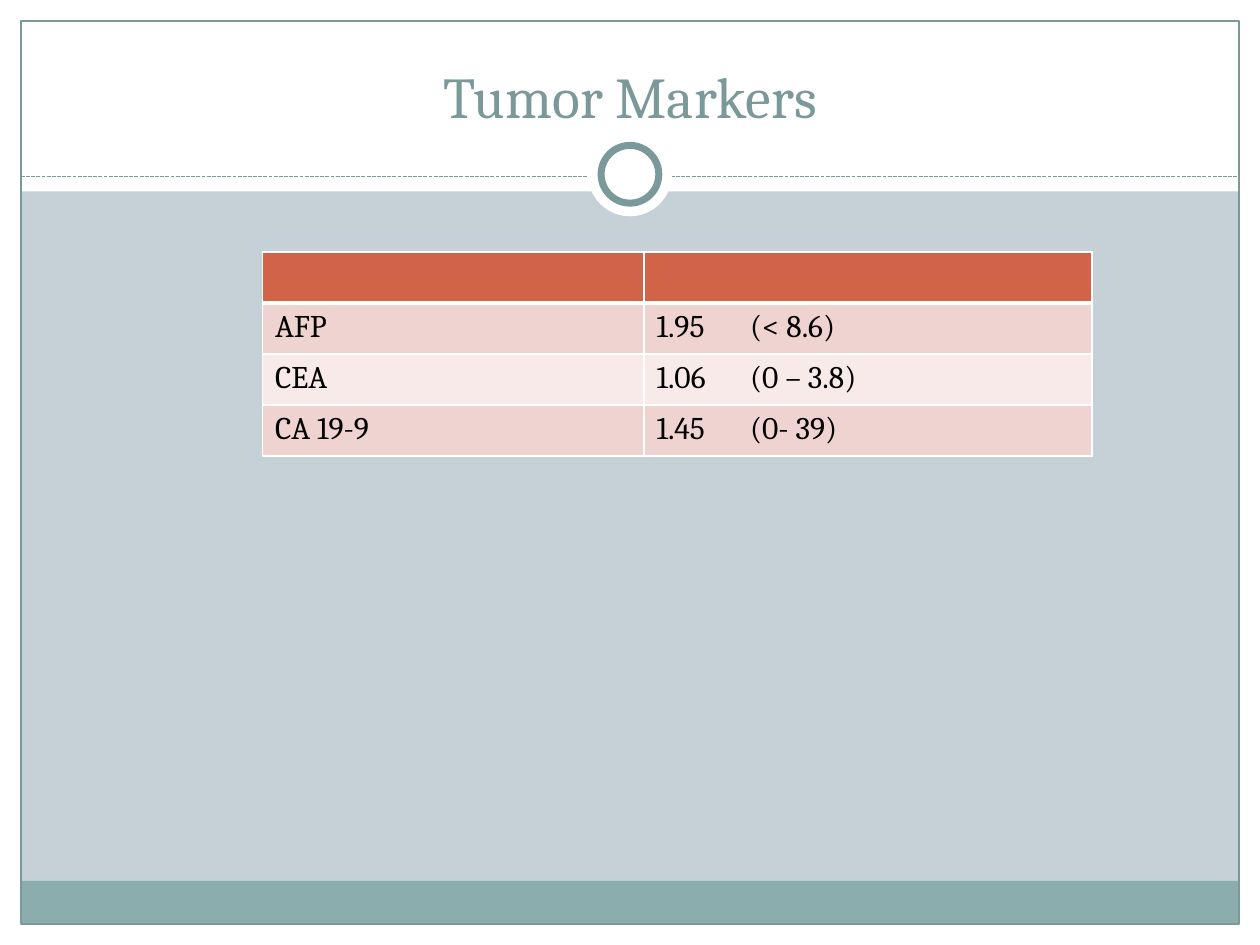
import pptx
import pptx.dml.color
import pptx.enum.dml
import pptx.enum.shapes
import pptx.enum.text
import pptx.oxml.ns
import pptx.util
from lxml import etree

COLORS = {"background": "C5D1D7", "white": "FFFFFF", "teal": "7C999A",
          "footer": "8CADAE", "header": "D16349", "band_dark": "EED3D0",
          "band_light": "F7EAE9", "text": "000000"}
COLUMNS, ROWS = 60, 45
SHAPE = pptx.enum.shapes.MSO_SHAPE
qn = pptx.oxml.ns.qn


def rgb(name):
    return pptx.dml.color.RGBColor.from_string(COLORS[name])


class SlideBuilder:
    """Places elements on a grid of COLUMNS by ROWS."""
    font = "Cambria"

    def __init__(self, prs):
        self.unit_x = prs.slide_width / COLUMNS
        self.unit_y = prs.slide_height / ROWS
        self.slide = prs.slides.add_slide(prs.slide_layouts[6])
        self.shapes = self.slide.shapes
        fill = self.slide.background.fill
        fill.solid()
        fill.fore_color.rgb = rgb("background")

    def x(self, columns):
        return round(columns * self.unit_x)

    def y(self, rows):
        return round(rows * self.unit_y)

    def box(self, left, top, width, height):
        return self.x(left), self.y(top), self.x(width), self.y(height)

    def style_text(self, p, size, color):
        for r in p.runs:
            r.font.name = self.font
            r.font.size = pptx.util.Pt(size)
            r.font.color.rgb = rgb(color)

    def shape(self, kind, box, fill=None, line=None, weight=0.75):
        sp = self.shapes.add_shape(kind, *self.box(*box))
        sp.shadow.inherit = False
        if fill:
            sp.fill.solid()
            sp.fill.fore_color.rgb = rgb(fill)
        else:
            sp.fill.background()
        if line:
            sp.line.color.rgb = rgb(line)
            sp.line.width = pptx.util.Pt(weight)
        else:
            sp.line.fill.background()

    def circle(self, center_x, center_y, size, **style):
        box = (center_x - size / 2, center_y - size / 2, size, size)
        self.shape(SHAPE.OVAL, box, **style)

    def dashed_rule(self, left, right, row):
        rule = self.shapes.add_connector(
            pptx.enum.shapes.MSO_CONNECTOR.STRAIGHT,
            self.x(left), self.y(row), self.x(right), self.y(row))
        rule.line.color.rgb = rgb("teal")
        rule.line.width = pptx.util.Pt(0.75)
        rule.line.dash_style = pptx.enum.dml.MSO_LINE.SQUARE_DOT
        etree.SubElement(rule._element.spPr, qn("a:effectLst"))

    def title(self, text, box):
        tf = self.shapes.add_textbox(*self.box(*box)).text_frame
        tf.word_wrap = True
        tf.vertical_anchor = pptx.enum.text.MSO_ANCHOR.BOTTOM
        tf.text = text
        p = tf.paragraphs[0]
        p.alignment = pptx.enum.text.PP_ALIGN.CENTER
        self.style_text(p, 33, "teal")

    def cell_borders(self, cell, bottom):
        """Draw white borders; they must precede the fill in the cell's XML."""
        tc_pr = cell._tc.get_or_add_tcPr()
        for side, weight in (("L", 1), ("R", 1), ("T", 1), ("B", bottom)):
            ln = etree.SubElement(tc_pr, qn("a:ln" + side),
                                  w=str(pptx.util.Pt(weight)))
            fill = etree.SubElement(ln, qn("a:solidFill"))
            etree.SubElement(fill, qn("a:srgbClr"), val=COLORS["white"])

    def tab_stop(self, p, column):
        tabs = etree.SubElement(p._p.get_or_add_pPr(), qn("a:tabLst"))
        etree.SubElement(tabs, qn("a:tab"), pos=str(self.x(column)), algn="l")

    def table(self, rows, left, top, widths, row_height):
        box = (left, top, sum(widths), row_height * len(rows))
        table = self.shapes.add_table(len(rows), len(widths),
                                      *self.box(*box)).table
        for column, width in zip(table.columns, widths):
            column.width = self.x(width)
        for i, values in enumerate(rows):
            table.rows[i].height = self.y(row_height)
            band = "band_dark" if i % 2 else "band_light"
            for cell, text in zip(table.rows[i].cells, values):
                self.cell_borders(cell, bottom=1 if i else 3)
                cell.fill.solid()
                cell.fill.fore_color.rgb = rgb(band if i else "header")
                if text:
                    p = cell.text_frame.paragraphs[0]
                    p.text = text
                    if "\t" in text:
                        self.tab_stop(p, 4.45)
                    self.style_text(p, 18, "text")


def main():
    prs = pptx.Presentation()
    prs.slide_width = pptx.util.Inches(10)
    prs.slide_height = pptx.util.Inches(7.5)
    s = SlideBuilder(prs)

    margins_and_header = [(0, ROWS - 1, COLUMNS, 1), (0, 0, COLUMNS, 9.12),
                          (0, 0, 1, ROWS), (COLUMNS - 1, 0, 1, ROWS)]
    for box in margins_and_header:
        s.shape(SHAPE.RECTANGLE, box, fill="white")
    s.shape(SHAPE.RECTANGLE, (1, ROWS - 3.05, COLUMNS - 2, 2.05), fill="footer")
    s.shape(SHAPE.RECTANGLE, (1, 1, COLUMNS - 2, ROWS - 2), line="teal")
    s.dashed_rule(1, COLUMNS - 1, 8.4)
    s.circle(COLUMNS / 2, 8.3, 4, fill="white")
    s.circle(COLUMNS / 2, 8.3, 2.75, fill="white", line="teal", weight=4)

    s.title("Tumor Markers", (2, 1.5, COLUMNS - 4, 5))
    markers = [("", ""),
               ("AFP", "1.95\t(< 8.6)"),
               ("CEA", "1.06\t(0 – 3.8)"),
               ("CA 19-9", "1.45\t(0- 39)")]
    s.table(markers, left=12.5, top=12, widths=(18.17, 21.33), row_height=2.43)
    prs.save("out.pptx")


if __name__ == "__main__":
    main()
